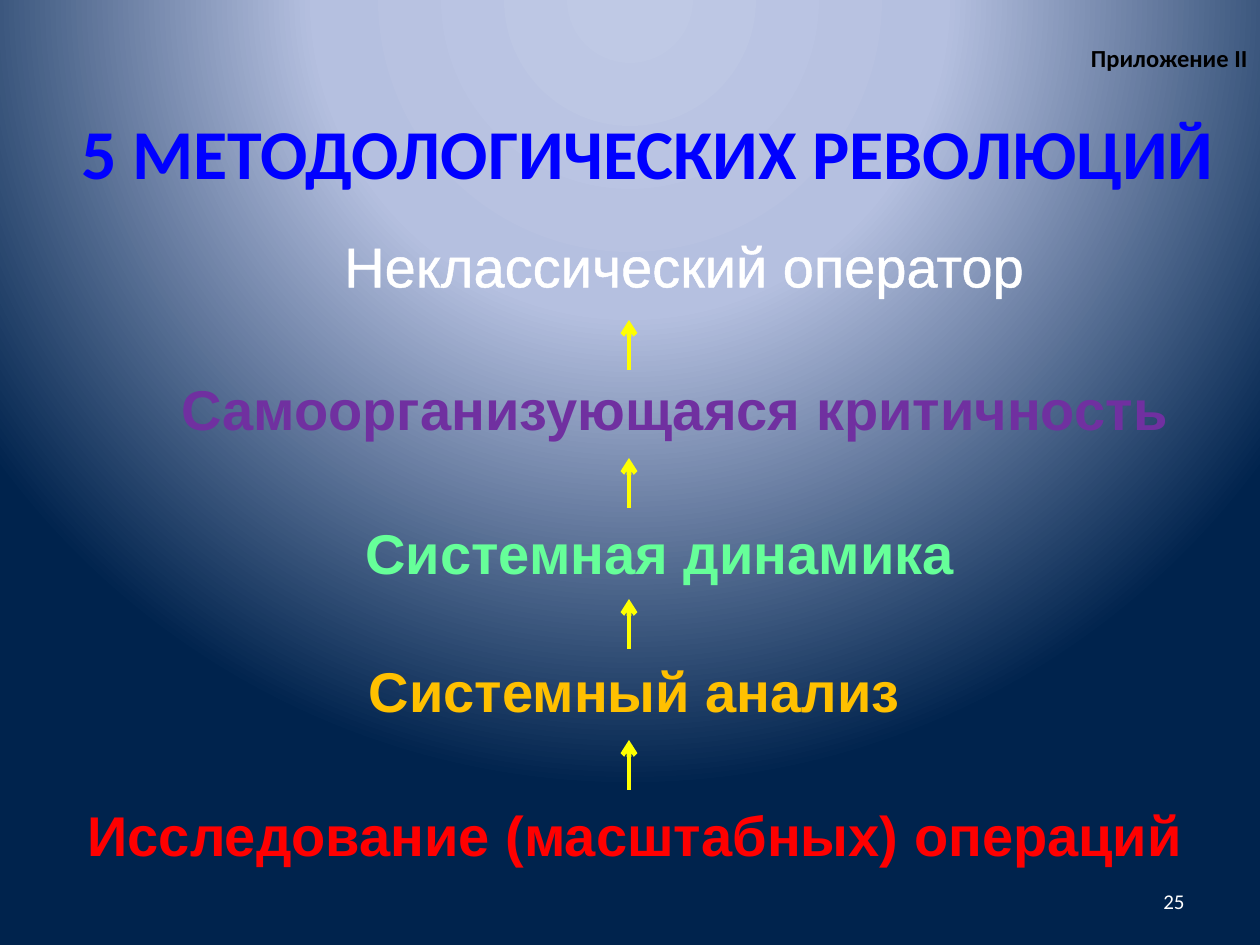
from lxml import etree
from pptx import Presentation
from pptx.dml.color import RGBColor
from pptx.enum.shapes import MSO_CONNECTOR
from pptx.enum.text import MSO_ANCHOR, PP_ALIGN
from pptx.oxml.ns import qn
from pptx.util import Pt

STRAIGHT = MSO_CONNECTOR.STRAIGHT
MIDDLE = MSO_ANCHOR.MIDDLE
CENTER, RIGHT = PP_ALIGN.CENTER, PP_ALIGN.RIGHT
EMU_PER_PX = 914400 / 126

THEME = {
    "heading_font": "Calibri",
    "body_font": "Arial",
    "appendix_size": 14,
    "title_size": 40,
    "stage_size": 32,
    "number_size": 12,
    "black": "000000",
    "title": "0000FF",
    "white": "FFFFFF",
    "purple": "7030A0",
    "green": "66FF99",
    "amber": "FFC000",
    "red": "FF0000",
    "arrow": "FFFF00",
    "background": [(0, "BFC9E5"), (40, "B5C0E0"), (100, "00234D")],
}


def px(value):
    return round(value * EMU_PER_PX)


def add_text(slide, text, box, align, color, font_format):
    shape = slide.shapes.add_textbox(*map(px, box))
    frame = shape.text_frame
    frame_format = {"word_wrap": True, "vertical_anchor": MIDDLE,
                    "margin_top": 0, "margin_bottom": 0}
    for name, value in frame_format.items():
        setattr(frame, name, value)
    paragraph = frame.paragraphs[0]
    paragraph.alignment = align
    run = paragraph.add_run()
    run.text = text
    for name, value in font_format.items():
        setattr(run.font, name, value)
    run.font.color.rgb = RGBColor.from_string(THEME[color])
    return run


presentation = Presentation()
presentation.slide_width = px(1260)
presentation.slide_height = px(945)
slide = presentation.slides.add_slide(presentation.slide_layouts[6])

slide.background.fill.gradient()
gradient = next(slide.element.iter(qn("a:gradFill")))
for child in list(gradient):
    gradient.remove(child)
stops = etree.SubElement(gradient, qn("a:gsLst"))
for position, color in THEME["background"]:
    stop = etree.SubElement(stops, qn("a:gs"), pos=str(position * 1000))
    etree.SubElement(stop, qn("a:srgbClr"), val=color)
circle = etree.SubElement(gradient, qn("a:path"), path="circle")
etree.SubElement(circle, qn("a:fillToRect"),
                 l="50000", t="-80000", r="50000", b="180000")

headings = [
    ("Приложение II", (0, 43, 1260, 30), "black", "appendix_size"),
    ("5 МЕТОДОЛОГИЧЕСКИХ РЕВОЛЮЦИЙ", (0, 109, 1226, 85), "title", "title_size"),
]
for text, box, color, size in headings:
    add_text(slide, text, box, RIGHT, color,
             {"name": THEME["heading_font"], "size": Pt(THEME[size]), "bold": True})

for arrow_bottom in (790, 649, 508, 370):
    arrow = slide.shapes.add_connector(
        STRAIGHT, px(629), px(arrow_bottom), px(629), px(arrow_bottom - 50))
    arrow.line.color.rgb = RGBColor.from_string(THEME["arrow"])
    arrow.line.width = Pt(2.75)
    etree.SubElement(arrow.line._get_or_add_ln(), qn("a:tailEnd"), type="arrow")
    etree.SubElement(arrow._element.spPr, qn("a:effectLst"))

stages = [
    ("Неклассический оператор", (263, 234, 843, 62), "white", False),
    ("Самоорганизующаяся критичность", (144, 344, 1062, 129), "purple", True),
    ("Системная динамика", (263, 493, 794, 118), "green", True),
    ("Системный анализ", (302, 651, 665, 79), "amber", True),
    ("Исследование (масштабных) операций", (30, 800, 1211, 69), "red", True),
]
for text, box, color, bold in stages:
    run = add_text(slide, text, box, CENTER, color,
                   {"name": THEME["body_font"], "size": Pt(THEME["stage_size"]),
                    "bold": bold})
    if not bold:
        outline = etree.Element(qn("a:ln"), w=str(Pt(1.45)))
        outline_fill = etree.SubElement(outline, qn("a:solidFill"))
        etree.SubElement(outline_fill, qn("a:srgbClr"), val=THEME[color])
        run.font._element.insert(0, outline)

add_text(slide, "25", (903, 876, 294, 50), RIGHT, "white",
         {"name": THEME["heading_font"], "size": Pt(THEME["number_size"])})

presentation.save("out.pptx")
